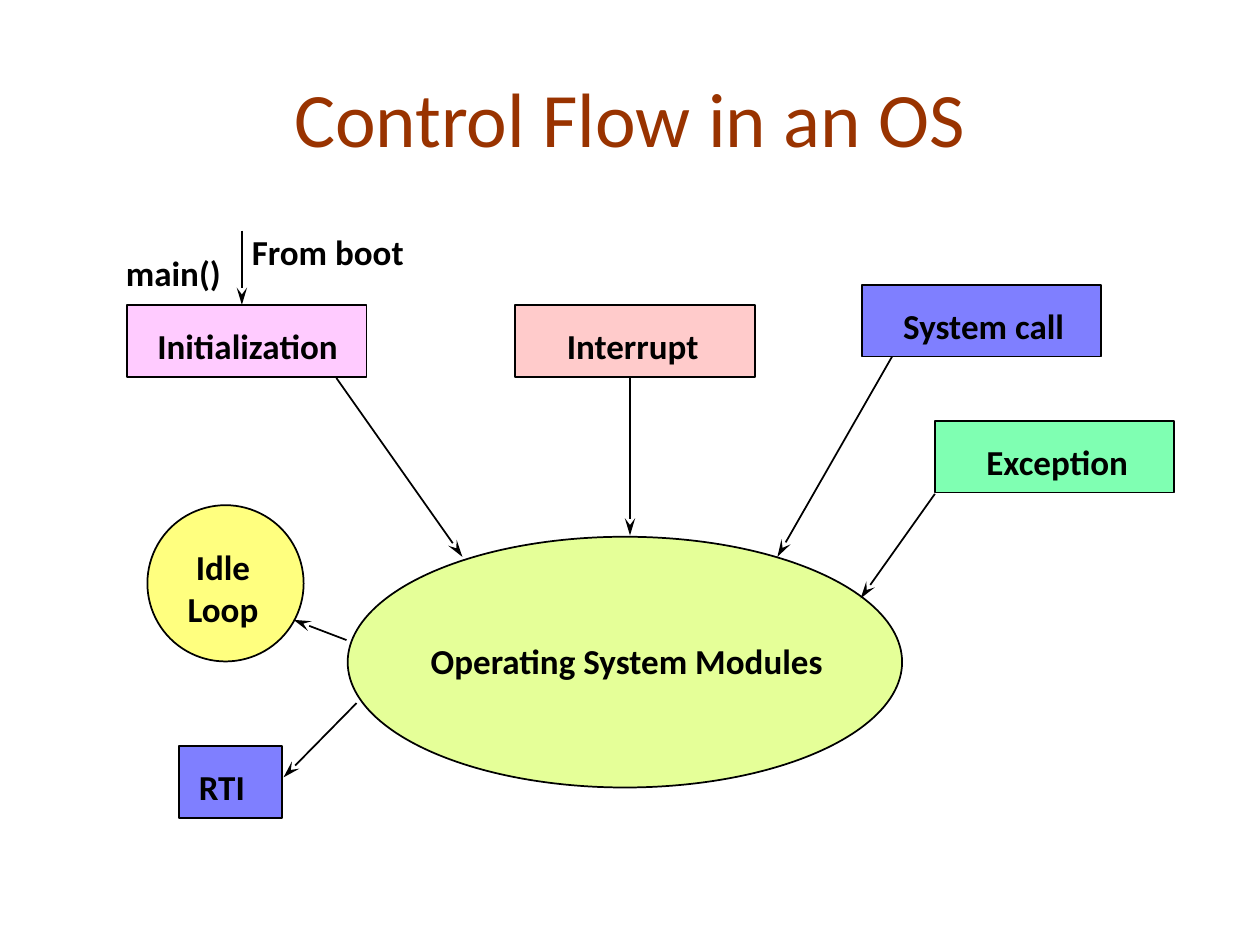
from lxml import etree
from pptx import Presentation
from pptx.dml.color import RGBColor
from pptx.enum.shapes import MSO_CONNECTOR, MSO_SHAPE
from pptx.enum.text import MSO_ANCHOR, MSO_AUTO_SIZE, PP_ALIGN
from pptx.oxml.ns import qn
from pptx.util import Inches, Pt

OVAL, RECT = MSO_SHAPE.OVAL, MSO_SHAPE.RECTANGLE
LINE = MSO_CONNECTOR.STRAIGHT
LEFT, MID = PP_ALIGN.LEFT, PP_ALIGN.CENTER
TOP, HALF = MSO_ANCHOR.TOP, MSO_ANCHOR.MIDDLE
GROW = MSO_AUTO_SIZE.SHAPE_TO_FIT_TEXT

HUES = {
    "title": "993300", "ink": "000000", "lime": "CCFF33", "yellow": "FFFF00",
    "rose": "FF9999", "green": "00FF66", "pink": "FF99FF", "blue": "0000FF",
}
WIDE, TALL, ROW = 1.9, 0.57, 0.43


class Chart:
    """Draws the parts of a flow diagram on one slide in one style."""

    def __init__(self, slide):
        self.slide = slide
        self.shapes = slide.shapes
        self.font = "Calibri"

    def hue(self, name):
        return RGBColor.from_string(HUES[name])

    def text(self, words, x, y, w, h=ROW, size=20, hue="ink", bold=True,
             align=LEFT, anchor=TOP, wrap=False):
        box = self.shapes.add_textbox(Inches(x), Inches(y), Inches(w), Inches(h))
        frame = box.text_frame
        frame.text = words
        frame.word_wrap = wrap
        frame.vertical_anchor = anchor
        if not wrap:
            frame.auto_size = GROW
        for par in frame.paragraphs:
            par.alignment = align
            for run in par.runs:
                run.font.name = self.font
                run.font.size = Pt(size)
                run.font.bold = bold
                run.font.color.rgb = self.hue(hue)

    def node(self, kind, hue, x, y, w=WIDE, h=TALL):
        shape = self.shapes.add_shape(kind, Inches(x), Inches(y), Inches(w), Inches(h))
        shape.shadow.inherit = False
        shape.fill.solid()
        shape.fill.fore_color.rgb = self.hue(hue)
        tint = next(shape.element.spPr.iter(qn("a:srgbClr")))
        etree.SubElement(tint, qn("a:alpha"), val="50000")
        shape.line.color.rgb = self.hue("ink")
        shape.line.width = Pt(1)

    def arrow(self, *ends):
        link = self.shapes.add_connector(LINE, *map(Inches, ends))
        link.line.color.rgb = self.hue("ink")
        link.line.width = Pt(1)
        props = link.element.spPr
        etree.SubElement(props.find(qn("a:ln")), qn("a:tailEnd"),
                         type="stealth", w="med", len="lg")
        etree.SubElement(props, qn("a:effectLst"))


def main():
    deck = Presentation()
    deck.slide_width, deck.slide_height = Inches(10), Inches(7.5)
    chart = Chart(deck.slides.add_slide(deck.slide_layouts[6]))

    chart.text("Control Flow in an OS", 0.5, 0.3, 9, 1.25, size=44, hue="title",
               bold=False, align=MID, anchor=HALF, wrap=True)

    chart.node(OVAL, "lime", 2.76, 4.26, 4.4, 1.99)
    chart.text("Operating System Modules", 3.32, 5.03, 3.43)
    chart.node(OVAL, "yellow", 1.17, 4.01, 1.24, 1.24)
    chart.text("Idle\nLoop", 1.36, 4.28, 0.82, 0.77, align=MID)

    boxes = [
        ("Initialization", "pink", 1.01, 2.42, WIDE, 1.15, 1.73),
        ("Interrupt", "rose", 4.09, 2.42, WIDE, 4.4, 1.33),
        ("System call", "blue", 6.84, 2.26, WIDE, 7.07, 1.54),
        ("Exception", "green", 7.42, 3.34, WIDE, 7.73, 1.39),
        ("RTI", "blue", 1.42, 5.92, 0.82, 1.48, 0.7),
    ]
    for words, hue, x, y, w, left, span in boxes:
        chart.node(RECT, hue, x, y, w)
        chart.text(words, left, y + 0.11, span)

    chart.text("From boot", 1.9, 1.78, 1.46)
    chart.text("main()", 0.9, 1.95, 0.99)

    arrows = [
        (1.92, 1.83, 1.92, 2.42),
        (2.67, 3, 3.67, 4.42),
        (5, 3, 5, 4.25),
        (7.08, 2.83, 6.17, 4.42),
        (7.42, 3.92, 6.83, 4.75),
        (2.75, 5.08, 2.33, 4.92),
        (2.83, 5.58, 2.25, 6.17),
    ]
    for ends in arrows:
        chart.arrow(*ends)

    deck.save("out.pptx")


if __name__ == "__main__":
    main()
